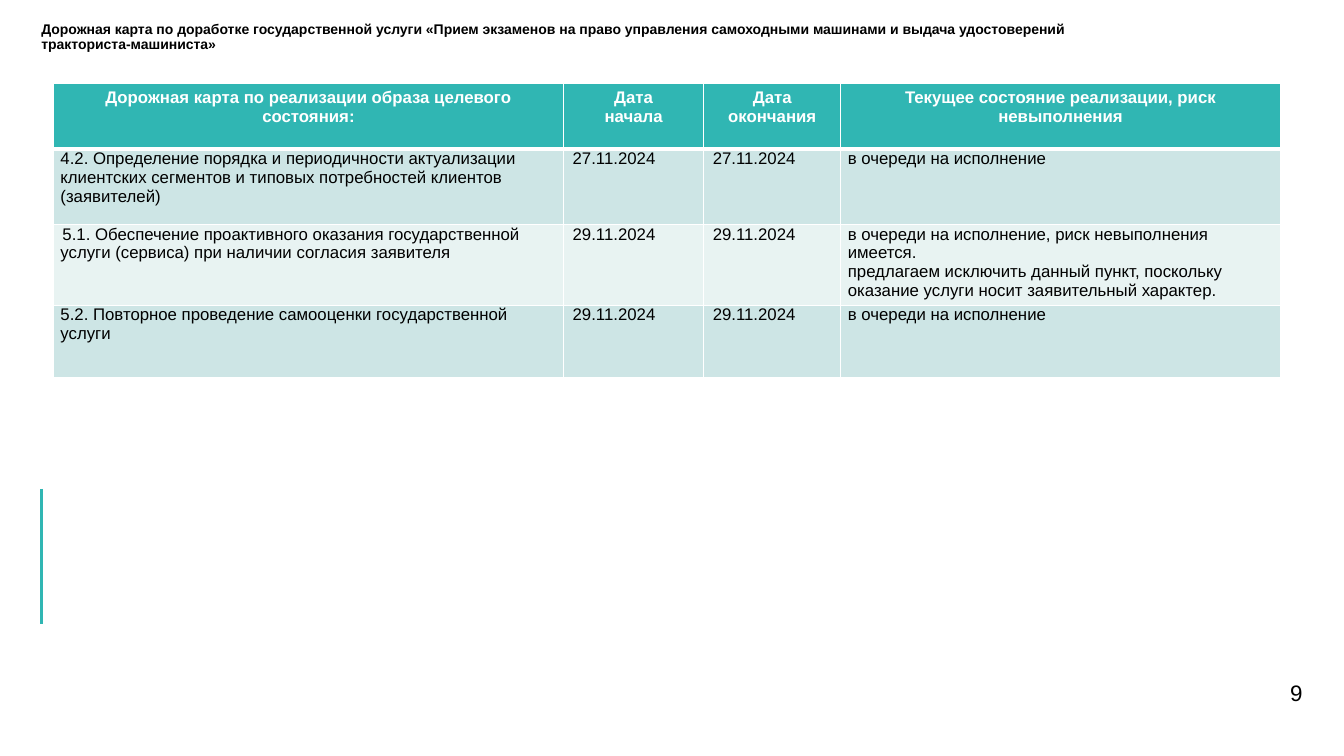
from pptx import Presentation
from pptx.dml.color import RGBColor
from pptx.enum.shapes import MSO_CONNECTOR as Link
from pptx.enum.text import MSO_ANCHOR as Anchor, MSO_AUTO_SIZE as Fit, PP_ALIGN as Align
from pptx.oxml import parse_xml
from pptx.oxml.ns import nsdecls
from pptx.util import Inches, Pt

TITLE = ("Дорожная карта по доработке государственной услуги «Прием экзаменов на право "
         "управления самоходными машинами и выдача удостоверений тракториста-машиниста»")
HEAD = ["Дорожная карта по реализации образа целевого состояния:", "Дата\nначала",
        "Дата окончания", "Текущее состояние реализации, риск невыполнения"]
WAIT = "в очереди на исполнение"
STEPS = [
    ("4.2. Определение порядка и периодичности актуализации клиентских сегментов "
     "и типовых потребностей клиентов (заявителей)", "27.11.2024", "27.11.2024", WAIT),
    ("5.1. Обеспечение проактивного оказания государственной услуги (сервиса) "
     "при наличии согласия заявителя", "29.11.2024", "29.11.2024",
     WAIT + ", риск невыполнения имеется.\nпредлагаем исключить данный пункт, "
     "поскольку оказание услуги носит заявительный характер."),
    ("5.2. Повторное проведение самооценки государственной услуги",
     "29.11.2024", "29.11.2024", WAIT),
]
PAGE = "9"
COLS = [5.06, 1.39, 1.36, 4.36]
ROWS = [0.65, 0.75, 0.75, 0.72]
INDENTED = {(1, 1), (1, 2), (2, 0), (2, 1), (2, 2), (3, 1), (3, 2)}
TEAL, BANDS = "30B6B3", ["E8F3F2", "CDE5E5"]
BLACK, WHITE = "000000", "FFFFFF"
EDGE = 0.41


def rgb(code):
    return RGBColor.from_string(code)


def style(frame, size, color, bold=False, align=None):
    for para in frame.paragraphs:
        if align is not None:
            para.alignment = align
        for run in para.runs:
            font = run.font
            font.name, font.size, font.bold = "Arial", Pt(size), bold
            font.color.rgb = rgb(color)


def pad(frame):
    frame.margin_left = frame.margin_right = 0
    frame.margin_top = frame.margin_bottom = 0
    frame.word_wrap = True


def border(cell, widths):
    """Draw white cell edges; widths are left, right, top, bottom in points."""
    props = cell._tc.get_or_add_tcPr()
    for i, (side, width) in enumerate(zip("LRTB", widths)):
        props.insert(i, parse_xml(
            f'<a:ln{side} {nsdecls("a")} w="{Pt(width)}"><a:solidFill>'
            f'<a:srgbClr val="{WHITE}"/></a:solidFill></a:ln{side}>'))


def add_title(slide):
    title = slide.shapes.title
    title.left, title.top, title.width, title.height = map(Inches, (EDGE, 0.22, 11.05, 0.39))
    frame = title.text_frame
    pad(frame)
    frame.auto_size, frame.vertical_anchor = Fit.NONE, Anchor.TOP
    frame.text = TITLE
    frame.paragraphs[0].line_spacing = 0.9
    style(frame, 10, BLACK, True, Align.LEFT)


def add_plan(slide):
    table = slide.shapes.add_table(len(ROWS), len(COLS), Inches(0.53), Inches(0.83),
                                   Inches(sum(COLS)), Inches(sum(ROWS))).table
    for col, width in zip(table.columns, COLS):
        col.width = Inches(width)
    for row, height in zip(table.rows, ROWS):
        row.height = Inches(height)
    for r, texts in enumerate([HEAD] + STEPS):
        for c, text in enumerate(texts):
            cell = table.cell(r, c)
            frame = cell.text_frame
            frame.text = text
            cell.fill.solid()
            cell.fill.fore_color.rgb = rgb(BANDS[r % 2] if r else TEAL)
            border(cell, (1, 1, 3 if r == 1 else 1, 1 if r else 3))
            if r == 0:
                style(frame, 12, WHITE, True, Align.CENTER)
                continue
            cell.margin_left = cell.margin_right = Inches(0.07)
            cell.margin_top = cell.margin_bottom = 0
            style(frame, 12, BLACK)
            if (r, c) in INDENTED:
                frame.paragraphs[0]._p.get_or_add_pPr().set("indent", str(Inches(0.02)))


def add_rule(slide):
    rule = slide.shapes.add_connector(Link.STRAIGHT, *map(Inches, (EDGE, 4.85, EDGE, 6.19)))
    rule.line.color.rgb, rule.line.width = rgb(TEAL), Pt(2.25)
    rule._element.spPr.append(parse_xml(f'<a:effectLst {nsdecls("a")}/>'))


def add_page(slide):
    frame = slide.shapes.add_textbox(*map(Inches, (11.86, 6.66, 1.06, 0.43))).text_frame
    pad(frame)
    frame.vertical_anchor = Anchor.MIDDLE
    frame.text = PAGE
    style(frame, 16, BLACK, align=Align.RIGHT)


def main():
    deck = Presentation()
    deck.slide_width, deck.slide_height = Inches(13.33), Inches(7.5)
    slide = deck.slides.add_slide(deck.slide_layouts[5])
    for add in (add_title, add_page, add_rule, add_plan):
        add(slide)
    deck.save("out.pptx")


if __name__ == "__main__":
    main()
